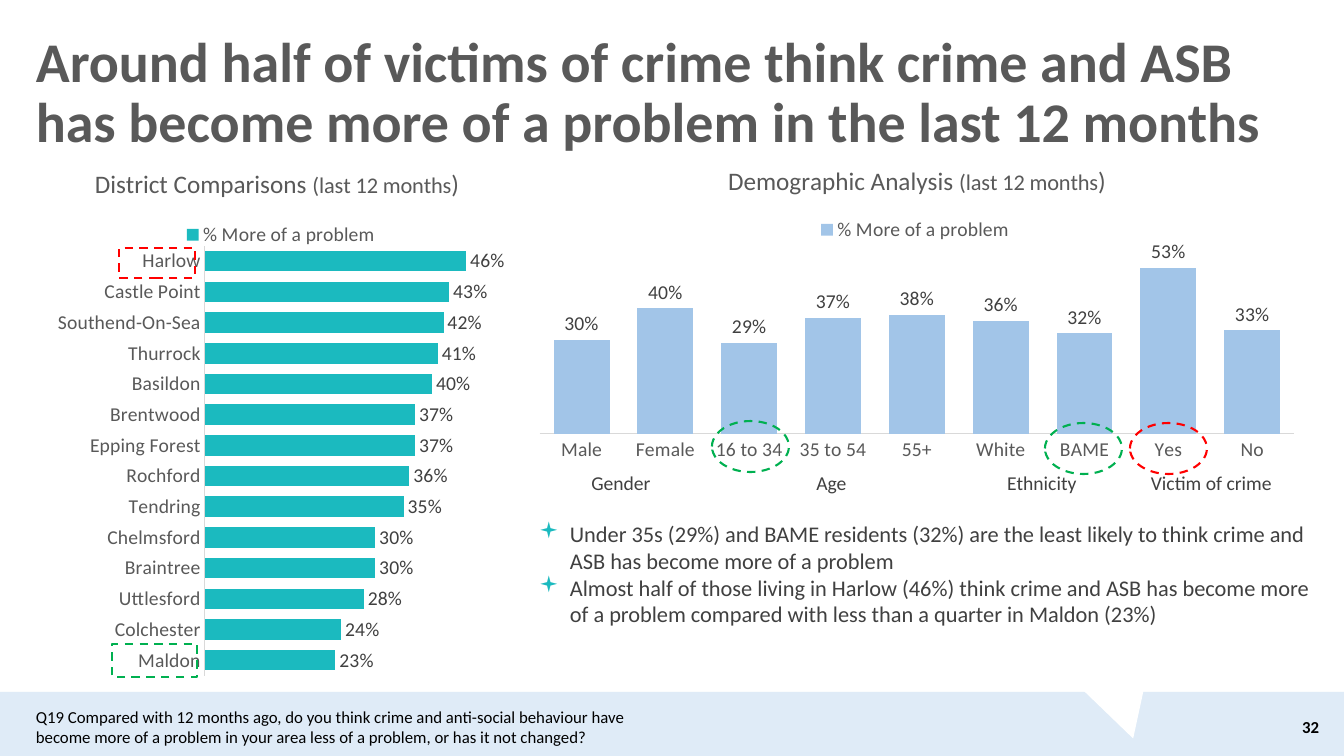
from pptx import Presentation
from pptx.chart.data import CategoryChartData
from pptx.dml.color import RGBColor
from pptx.enum.chart import XL_CHART_TYPE, XL_LABEL_POSITION, XL_LEGEND_POSITION, XL_TICK_MARK
from pptx.enum.dml import MSO_LINE
from pptx.enum.shapes import MSO_SHAPE
from pptx.enum.text import MSO_ANCHOR, PP_ALIGN
from pptx.oxml import parse_xml
from pptx.oxml.ns import nsdecls, qn
from pptx.util import Pt

PX = 914400 / 100.8
FONT = "Calibri"
PLAIN = "{2D5ABB26-0587-4C30-8999-92F81FD0307C}"  # table style without grid
RECT, OVAL, WEDGE = MSO_SHAPE.RECTANGLE, MSO_SHAPE.OVAL, MSO_SHAPE.ISOSCELES_TRIANGLE
BARS, COLS = XL_CHART_TYPE.BAR_CLUSTERED, XL_CHART_TYPE.COLUMN_CLUSTERED
TOP, OUT, NO_TICK = XL_LEGEND_POSITION.TOP, XL_LABEL_POSITION.OUTSIDE_END, XL_TICK_MARK.NONE
DASH, MIDDLE = MSO_LINE.DASH, MSO_ANCHOR.MIDDLE
CENTER, RIGHT = PP_ALIGN.CENTER, PP_ALIGN.RIGHT

WHITE = RGBColor(0xFF, 0xFF, 0xFF)
BLACK = RGBColor(0, 0, 0)
GREY = RGBColor(0x59, 0x59, 0x59)
DARK = RGBColor(0x40, 0x40, 0x40)
PALE = RGBColor(0xD9, 0xD9, 0xD9)
ICE = RGBColor(0xDF, 0xEB, 0xF7)
SKY = RGBColor(0xA2, 0xC5, 0xE8)
TEAL = RGBColor(0x1B, 0xBA, 0xBF)
RED = RGBColor(0xFF, 0, 0)
GREEN = RGBColor(0, 0xB0, 0x50)

TITLE = ("Around half of victims of crime think crime and ASB "
         "has become more of a problem in the last 12 months")
QUERY = ("Q19 Compared with 12 months ago, do you think crime and anti-social behaviour have "
         "become more of a problem in your area less of a problem, or has it not changed?")
POINTS = [
    "Under 35s (29%) and BAME residents (32%) are the least likely to think crime and "
    "ASB has become more of a problem",
    "Almost half of those living in Harlow (46%) think crime and ASB has become more "
    "of a problem compared with less than a quarter in Maldon (23%)",
]
TOWNS = {"Harlow": 0.46, "Castle Point": 0.43, "Southend-On-Sea": 0.42, "Thurrock": 0.41,
         "Basildon": 0.40, "Brentwood": 0.37, "Epping Forest": 0.37, "Rochford": 0.36,
         "Tendring": 0.35, "Chelmsford": 0.30, "Braintree": 0.30, "Uttlesford": 0.28,
         "Colchester": 0.24, "Maldon": 0.23}
PEOPLE = {"Male": 0.30, "Female": 0.40, "16 to 34": 0.29, "35 to 54": 0.37, "55+": 0.38,
          "White": 0.36, "BAME": 0.32, "Yes": 0.53, "No": 0.33}
GROUPS = {"Gender": 170, "Age": 251, "Ethnicity": 170, "Victim of crime": 169}


def px(*nums):
    return [round(n * PX) for n in nums]


def style(font, size, color, bold=False):
    look = {"name": FONT, "size": Pt(size), "bold": bold}
    for key, val in look.items():
        setattr(font, key, val)
    font.color.rgb = color


def add_text(slide, box, lines, size, color, bold=False, align=None, anchor=None):
    frame = slide.shapes.add_textbox(*px(*box)).text_frame
    frame.word_wrap = True
    frame.vertical_anchor = anchor
    for i, line in enumerate(lines):
        para = frame.add_paragraph() if i else frame.paragraphs[0]
        para.alignment = align
        run = para.add_run()
        run.text = line
        style(run.font, size, color, bold)
    return frame


def add_form(slide, kind, box, fill=None, line=None):
    form = slide.shapes.add_shape(kind, *px(*box))
    form.shadow.inherit = False
    if fill is None:
        form.fill.background()
    else:
        form.fill.solid()
        form.fill.fore_color.rgb = fill
    if line is None:
        form.line.fill.background()
    else:
        form.line.color.rgb = line
        form.line.width = Pt(1.5)
        form.line.dash_style = DASH
    return form


def make_layout(spot, inner=False):
    """Manual chart layout; spot is x, y and optionally w, h as shares of the chart."""
    tags = '<c:layoutTarget val="inner"/>' if inner else ""
    tags += '<c:xMode val="edge"/><c:yMode val="edge"/>'
    tags += "".join(f'<c:{k} val="{v}"/>' for k, v in zip("xywh", spot))
    return parse_xml(f'<c:layout {nsdecls("c")}><c:manualLayout>{tags}'
                     "</c:manualLayout></c:layout>")


def add_graph(slide, box, kind, head, data, color, peak, plot, key):
    feed = CategoryChartData(number_format="0%")
    feed.categories = list(data)
    feed.add_series("% More of a problem", list(data.values()))
    chart = slide.shapes.add_chart(kind, *px(*box), feed).chart
    style(chart.font, 14, BLACK)

    # Title with a smaller note in brackets
    para = chart.chart_title.text_frame.paragraphs[0]
    for part, size in ((head + " ", 18), ("(last 12 months", 16), (")", 18)):
        run = para.add_run()
        run.text = part
        style(run.font, size, GREY)

    # Legend
    chart.has_legend = True
    chart.legend.position = TOP
    chart.legend.include_in_layout = False
    style(chart.legend.font, 14, GREY)
    chart.legend._element.find(qn("c:legendPos")).addnext(make_layout(key))

    # Axes
    cat, val = chart.category_axis, chart.value_axis
    cat.major_tick_mark = NO_TICK
    cat.reverse_order = kind == BARS
    style(cat.tick_labels.font, 14, GREY)
    cat.format.line.color.rgb = PALE
    cat.format.line.width = Pt(0.75)
    for name, mark in {"minimum_scale": 0, "maximum_scale": peak,
                       "has_major_gridlines": False, "visible": False}.items():
        setattr(val, name, mark)

    # Bars and their values
    bars = chart.plots[0]
    bars.gap_width = 50
    bars.vary_by_categories = False
    fill = bars.series[0].format.fill
    fill.solid()
    fill.fore_color.rgb = color
    bars.has_data_labels = True
    tags = bars.data_labels
    for name, mark in {"show_value": True, "position": OUT, "number_format": "0%",
                       "number_format_is_linked": False}.items():
        setattr(tags, name, mark)
    style(tags.font, 14, DARK)

    area = chart._chartSpace.chart.plotArea
    for old in area.findall(qn("c:layout")):
        area.remove(old)
    area.insert(0, make_layout(plot, True))
    return bars


def add_groups(slide, box):
    grid = slide.shapes.add_table(1, len(GROUPS), *px(*box)).table
    grid.first_row = grid.horz_banding = False
    grid._tbl.tblPr.find(qn("a:tableStyleId")).text = PLAIN
    grid.rows[0].height = px(box[3])[0]
    for i, (name, wide) in enumerate(GROUPS.items()):
        grid.columns[i].width = px(wide)[0]
        cell = grid.cell(0, i)
        cell.fill.background()
        cell.vertical_anchor = MIDDLE
        cell.text = name
        para = cell.text_frame.paragraphs[0]
        para.alignment = CENTER
        style(para.runs[0].font, 14, DARK)


def add_points(slide, box):
    frame = add_text(slide, box, POINTS, 16, DARK)
    dent = px(31)[0]
    for para in frame.paragraphs:
        props = para._p.get_or_add_pPr()
        props.set("marL", str(dent))
        props.set("indent", str(-dent))
        for tag in (f'<a:buClr {nsdecls("a")}><a:srgbClr val="{TEAL}"/></a:buClr>',
                    f'<a:buFont {nsdecls("a")} typeface="Wingdings"/>',
                    f'<a:buChar {nsdecls("a")} char="▪"/>'):
            props.append(parse_xml(tag))


def add_footer(slide, box):
    x, y, w, h = box
    add_form(slide, RECT, box, ICE)
    add_form(slide, WEDGE, (x + 1084, y - 22, 78, 70), WHITE).rotation = 163.1
    add_text(slide, (x + 1272, y + 15, 57, 40), ["32"], 12, BLACK, True, RIGHT, MIDDLE)
    add_text(slide, (x + 26, y + 10, 616, 50), [QUERY], 12, BLACK)


def add_marks(slide):
    add_form(slide, RECT, (119, 248, 76, 30), line=RED)
    add_form(slide, RECT, (112, 644, 85, 33), line=GREEN)
    for x, y, color in ((1130, 423, RED), (712, 421, GREEN), (1045, 423, GREEN)):
        add_form(slide, OVAL, (x, y, 77, 51), line=color)


def main():
    deck = Presentation()
    deck.slide_width, deck.slide_height = px(1344, 756)
    slide = deck.slides.add_slide(deck.slide_layouts[6])
    add_footer(slide, (0, 692, 1344, 64))
    bars = add_graph(slide, (524, 150, 786, 319), COLS, "Demographic Analysis", PEOPLE,
                     SKY, 0.6, (0.02, 0.3, 0.96, 0.59), (0.37, 0.2))
    bars.overlap = -27
    add_graph(slide, (36, 148, 482, 544), BARS, "District Comparisons", TOWNS,
              TEAL, 0.5, (0.35, 0.18, 0.59, 0.79), (0.3, 0.13))
    title = add_text(slide, (26, 17, 1303, 155), [TITLE], 40, GREY, True, anchor=MIDDLE)
    title.paragraphs[0].line_spacing = 0.9
    add_points(slide, (529, 515, 800, 119))
    add_marks(slide)
    add_groups(slide, (536, 464, 760, 39))
    deck.save("out.pptx")


if __name__ == "__main__":
    main()
